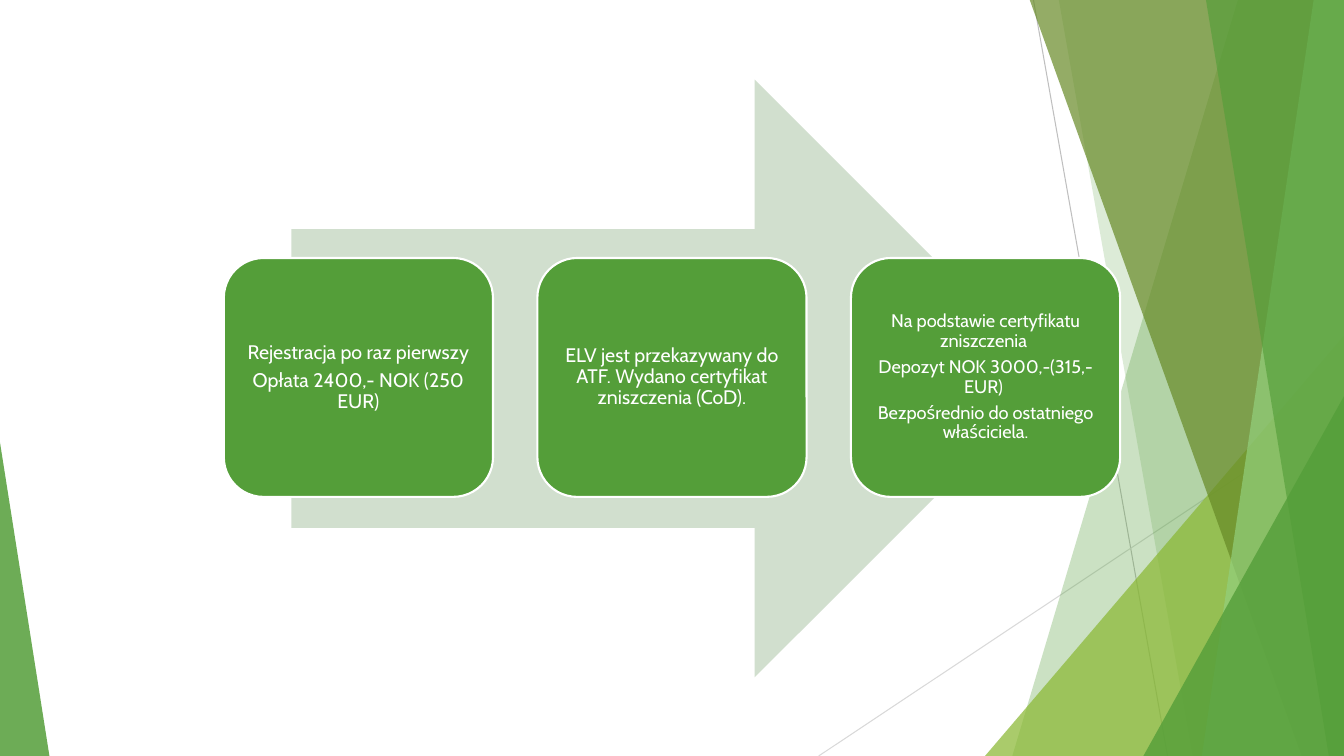
"""Build a slide with a three-step process arrow over green facets."""
from dataclasses import dataclass

from lxml import etree
from pptx import Presentation
from pptx import util as u
from pptx.dml.color import RGBColor
from pptx.enum import shapes, text
from pptx.oxml import ns


@dataclass(frozen=True)
class Theme:
    font: str = "Cabin"
    size: int = 14
    small: int = 13
    white: str = "FFFFFF"
    green: str = "549E39"
    lime: str = "8AB833"
    olive: str = "678A26"
    mint: str = "93D07D"
    arrow: str = "D1DFCE"
    line: str = "BFBFBF"
    pale_line: str = "D9D9D9"


def paint(sp, color, alpha=100):
    sp.shadow.inherit = False
    sp.fill.solid()
    sp.fill.fore_color.rgb = RGBColor.from_string(color)
    sp.line.fill.background()
    if alpha < 100:
        clr = sp._element.spPr.find(".//" + ns.qn("a:srgbClr"))
        etree.SubElement(clr, ns.qn("a:alpha")).set("val", str(alpha * 1000))


def add_text(tf, line, first=False, size=14, font="Cabin", color="FFFFFF"):
    p = tf.paragraphs[0] if first else tf.add_paragraph()
    p.alignment = text.PP_ALIGN.CENTER
    p.line_spacing = 0.9
    p.space_after = u.Pt(0.35 * size)
    r = p.add_run()
    r.text = line
    r.font.name = font
    r.font.size = u.Pt(size)
    r.font.color.rgb = RGBColor.from_string(color)


theme = Theme()
prs = Presentation()
W, H = 13.33, 7.5
prs.slide_width, prs.slide_height = u.Inches(W), u.Inches(H)
slide = prs.slides.add_slide(prs.slide_layouts[6])

for x1, y1, x2, color in [(10.25, 0, 11.58, theme.line),
                          (W, 4.03, 8.12, theme.pale_line)]:
    line = slide.shapes.add_connector(
        shapes.MSO_CONNECTOR.STRAIGHT,
        u.Inches(x1), u.Inches(y1), u.Inches(x2), u.Inches(H))
    line.line.color.rgb = RGBColor.from_string(color)
    line.line.width = u.Pt(0.75)
    etree.SubElement(line._element.spPr, ns.qn("a:effectLst"))

bands = [
    (12.28, 10.04, theme.green, 30),
    (10.5, 11.83, theme.green, 20),
    (10.21, 12.91, theme.olive, 70),
    (13.03, 11.92, theme.mint, 70),
    (11.96, 13.18, theme.green, 65),
]
triangles = [
    (9.77, 3.33, 3.56, 1, theme.lime, 72),
    (11.34, 3.93, 1.99, 1, theme.green, 80),
    (0, 4.39, 0.49, 0, theme.green, 85),
]
facets = bands[:2] + triangles[:1] + bands[2:] + triangles[1:]
for *place, color, alpha in facets:
    if len(place) == 2:
        top_x, bottom_x = place
        outline = slide.shapes.build_freeform(u.Inches(top_x), u.Inches(-0.01))
        corners = [(W, -0.01), (W, H), (bottom_x, H)]
        outline.add_line_segments([(u.Inches(x), u.Inches(y)) for x, y in corners])
        sp = outline.convert_to_shape()
    else:
        left, top, width, apex = place
        sp = slide.shapes.add_shape(
            shapes.MSO_SHAPE.ISOSCELES_TRIANGLE,
            u.Inches(left), u.Inches(top), u.Inches(width), u.Inches(H - top))
        sp.adjustments[0] = apex
    paint(sp, color, alpha)

arrow = slide.shapes.add_shape(
    shapes.MSO_SHAPE.RIGHT_ARROW,
    u.Inches(2.89), u.Inches(0.79), u.Inches(7.56), u.Inches(5.93))
paint(arrow, theme.arrow)

steps = [
    (theme.size, 0.06, ["Rejestracja po raz pierwszy", "Opłata 2400,- NOK (250 EUR)"]),
    (theme.size, 0.06, ["ELV jest przekazywany do ATF. Wydano certyfikat zniszczenia (CoD)."]),
    (theme.small, 0.05, ["Na podstawie certyfikatu zniszczenia ",
                         "Depozyt NOK 3000,-(315,- EUR) ",
                         "Bezpośrednio do ostatniego właściciela."]),
]
for i, (size, inset, lines) in enumerate(steps):
    step = slide.shapes.add_shape(
        shapes.MSO_SHAPE.ROUNDED_RECTANGLE,
        u.Inches(2.22 + 3.11 * i), u.Inches(2.56), u.Inches(2.67), u.Inches(2.37))
    paint(step, theme.green)
    step.line.color.rgb = RGBColor.from_string(theme.white)
    step.line.width = u.Pt(1.5)
    tf = step.text_frame
    tf.word_wrap = True
    tf.vertical_anchor = text.MSO_ANCHOR.MIDDLE
    tf.margin_left = tf.margin_right = tf.margin_top = tf.margin_bottom = u.Inches(inset)
    for n, words in enumerate(lines):
        add_text(tf, words, first=n == 0, size=size, font=theme.font, color=theme.white)

prs.save("out.pptx")
